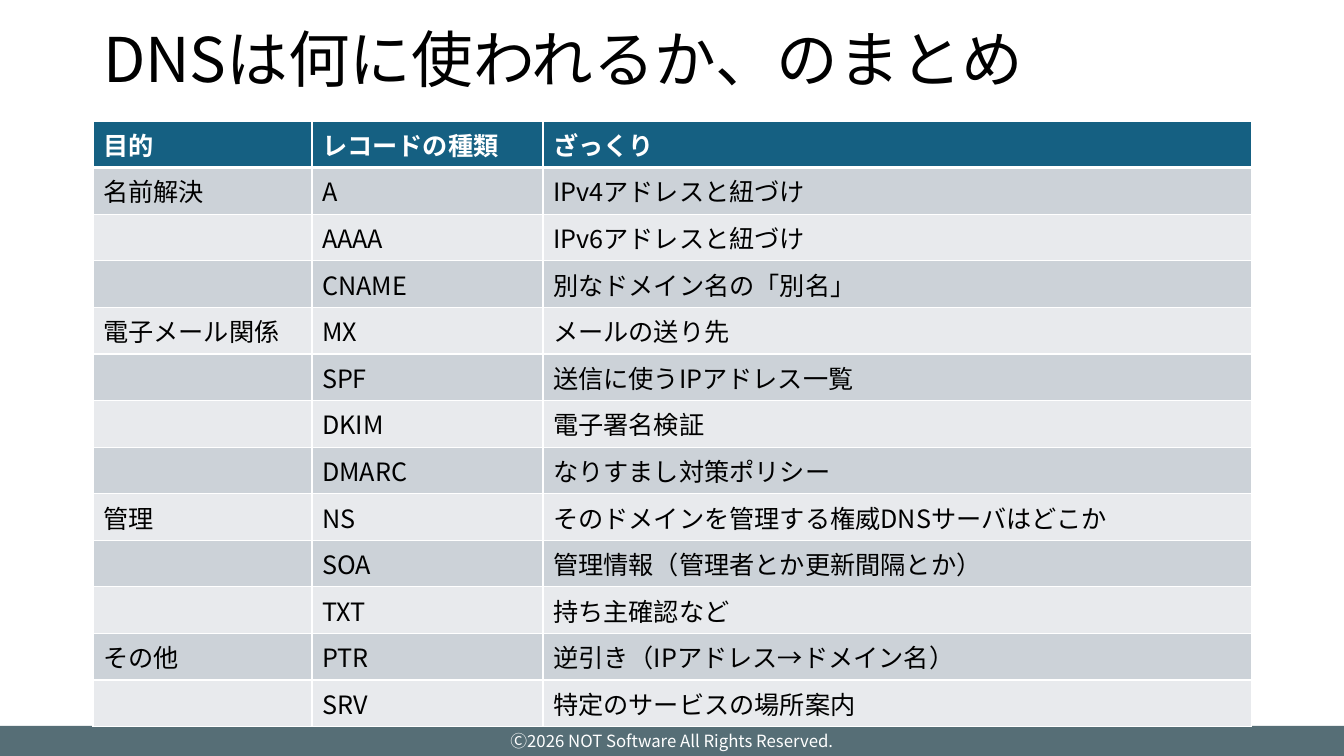
"""Builds a slide that sums up the DNS record types in a table."""
from lxml import etree
from pptx import Presentation
from pptx import util as u
from pptx.dml.color import RGBColor
from pptx.enum import shapes, text
from pptx.oxml.ns import qn

TITLE = "DNSは何に使われるか、のまとめ"
FOOTER = "Ⓒ2026 NOT Software All Rights Reserved."
HEADER = ("目的", "レコードの種類", "ざっくり")
GROUPS = [
    ("名前解決", [
        ("A", "IPv4アドレスと紐づけ"),
        ("AAAA", "IPv6アドレスと紐づけ"),
        ("CNAME", "別なドメイン名の「別名」"),
    ]),
    ("電子メール関係", [
        ("MX", "メールの送り先"),
        ("SPF", "送信に使うIPアドレス一覧"),
        ("DKIM", "電子署名検証"),
        ("DMARC", "なりすまし対策ポリシー"),
    ]),
    ("管理", [
        ("NS", "そのドメインを管理する権威DNSサーバはどこか"),
        ("SOA", "管理情報（管理者とか更新間隔とか）"),
        ("TXT", "持ち主確認など"),
    ]),
    ("その他", [
        ("PTR", "逆引き（IPアドレス→ドメイン名）"),
        ("SRV", "特定のサービスの場所案内"),
    ]),
]
FONT = "Noto Sans CJK JP"
WHITE, BLACK, BAR, HEAD = "FFFFFF", "000000", "566E76", "156082"
BANDS = ("CCD2D8", "E8EAED")
SLIDE_W, SLIDE_H, BAR_H = 1344, 756, 30
LEFT, TABLE_TOP, ROW_H = 93, 121, 41
COL_WIDTHS = (219, 231, 709)
TITLE_TOP, TITLE_H = 22, 81


def px(n):
    return u.Emu(round(n * 914400 / 100.8))


def rgb(color):
    return RGBColor.from_string(color)


def add_run(p, words, size, color, bold=False):
    r = p.add_run()
    r.text = words
    r.font.size, r.font.bold, r.font.name = u.Pt(size), bold, FONT
    r.font.color.rgb = rgb(color)
    etree.SubElement(r.font._element, qn("a:ea"), typeface=FONT)


def add_border(cell, side, width):
    ln = etree.SubElement(cell._tc.get_or_add_tcPr(), qn("a:ln" + side), w=str(u.Pt(width)))
    fill = etree.SubElement(ln, qn("a:solidFill"))
    etree.SubElement(fill, qn("a:srgbClr"), val=WHITE)


def add_title(s):
    sp = s.shapes.title
    sp.left, sp.top, sp.width, sp.height = px(LEFT), px(TITLE_TOP), px(sum(COL_WIDTHS)), px(TITLE_H)
    tf = sp.text_frame
    tf.vertical_anchor = text.MSO_ANCHOR.MIDDLE
    tf.auto_size = text.MSO_AUTO_SIZE.NONE
    p = tf.paragraphs[0]
    p.alignment, p.line_spacing = text.PP_ALIGN.LEFT, 0.9
    add_run(p, TITLE, 44, BLACK)


def add_footer(s):
    sp = s.shapes.add_shape(shapes.MSO_SHAPE.RECTANGLE, 0, px(SLIDE_H - BAR_H), px(SLIDE_W), px(BAR_H))
    sp.shadow.inherit = False
    sp.fill.solid()
    sp.fill.fore_color.rgb = rgb(BAR)
    sp.line.fill.background()
    tf = sp.text_frame
    tf.word_wrap = False
    tf.vertical_anchor = text.MSO_ANCHOR.MIDDLE
    p = tf.paragraphs[0]
    p.alignment = text.PP_ALIGN.CENTER
    add_run(p, FOOTER, 12, WHITE)


def add_records(s):
    rows = [HEADER]
    for purpose, records in GROUPS:
        for i, record in enumerate(records):
            rows.append(("" if i else purpose, *record))
    table = s.shapes.add_table(len(rows), len(HEADER), px(LEFT), px(TABLE_TOP),
                               px(sum(COL_WIDTHS)), px(ROW_H * len(rows))).table
    for col, width in zip(table.columns, COL_WIDTHS):
        col.width = px(width)
    for i, row in enumerate(rows):
        is_head = i == 0
        for j, words in enumerate(row):
            cell = table.cell(i, j)
            widths = {"L": 1, "R": 1, "T": 3 if i == 1 else 1, "B": 3 if is_head else 1}
            for side, width in widths.items():
                add_border(cell, side, width)
            cell.fill.solid()
            cell.fill.fore_color.rgb = rgb(HEAD if is_head else BANDS[(i - 1) % 2])
            if words:
                add_run(cell.text_frame.paragraphs[0], words, 18, WHITE if is_head else BLACK, is_head)


def main():
    prs = Presentation()
    prs.slide_width, prs.slide_height = px(SLIDE_W), px(SLIDE_H)
    s = prs.slides.add_slide(prs.slide_layouts[5])
    add_title(s)
    add_footer(s)
    add_records(s)
    prs.save("out.pptx")


if __name__ == "__main__":
    main()
